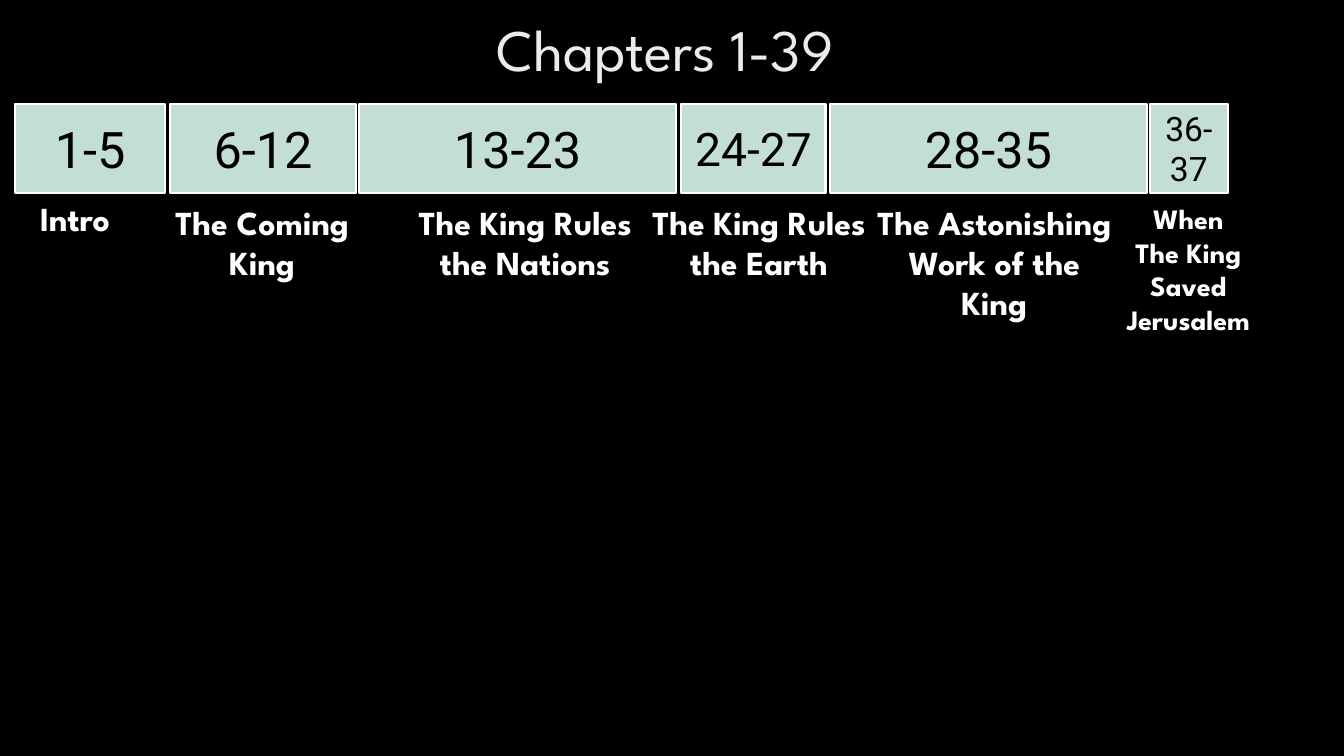
import pptx
import pptx.util
import pptx.dml.color
import pptx.enum.shapes
import pptx.enum.text

Pt = pptx.util.Pt
RGB = pptx.dml.color.RGBColor.from_string
LEFT = pptx.enum.text.PP_ALIGN.LEFT
CENTER = pptx.enum.text.PP_ALIGN.CENTER
TOP = pptx.enum.text.MSO_ANCHOR.TOP
MIDDLE = pptx.enum.text.MSO_ANCHOR.MIDDLE

theme = {
    "background": RGB("000000"),
    "title": RGB("EBEBEB"),
    "label": RGB("FFFFFF"),
    "block": RGB("C3DED3"),
    "block_line": RGB("FFFFFF"),
    "block_text": RGB("000000"),
    "heading_font": "League Spartan",
    "block_font": "Roboto",
    "title_size": 42,
    "label_size": 24,
    "small_label_size": 20,
    "block_size": 36,
    "tight_block_size": 33,
    "small_block_size": 24,
}


def write(sp, lines, font, size, color, bold=False, align=CENTER, anchor=TOP):
    tf = sp.text_frame
    tf.word_wrap = True
    tf.vertical_anchor = anchor
    tf.text = "\n".join(lines)
    for p in tf.paragraphs:
        p.alignment = align
        p.font.name = font
        p.font.size = Pt(size)
        p.font.bold = bold
        p.font.color.rgb = color


prs = pptx.Presentation()
prs.slide_width, prs.slide_height = Pt(960), Pt(540)
slide = prs.slides.add_slide(prs.slide_layouts[6])
slide.background.fill.solid()
slide.background.fill.fore_color.rgb = theme["background"]

# Title
sp = slide.shapes.add_textbox(Pt(104.4), Pt(2.9), Pt(740.9), Pt(110.2))
sp.text_frame.margin_top = Pt(6)
write(sp, ["Chapters 1-39"], theme["heading_font"], theme["title_size"], theme["title"])

# Chapter blocks: text, left, width, type size
blocks = [
    ("1-5", 10.8, 107.3, theme["block_size"]),
    ("6-12", 121.7, 132.5, theme["block_size"]),
    ("13-23", 256.3, 226.8, theme["block_size"]),
    ("24-27", 486.7, 103, theme["tight_block_size"]),
    ("28-35", 592.6, 226.8, theme["block_size"]),
    ("36-37", 821.5, 55.4, theme["small_block_size"]),
]
for text, left, width, size in blocks:
    sp = slide.shapes.add_shape(pptx.enum.shapes.MSO_SHAPE.RECTANGLE,
                                Pt(left), Pt(74.2), Pt(width), Pt(63.4))
    sp.shadow.inherit = False
    sp.fill.solid()
    sp.fill.fore_color.rgb = theme["block"]
    sp.line.color.rgb = theme["block_line"]
    sp.line.width = Pt(1.5)
    write(sp, [text], theme["block_font"], size, theme["block_text"], anchor=MIDDLE)

# Section labels: lines, left, top, width, height, type size, alignment
big, small = theme["label_size"], theme["small_label_size"]
labels = [
    (["Intro"], 21.6, 137.5, 128.2, 36, big, LEFT),
    (["The Coming King"], 103.7, 140.4, 167.1, 65.5, big, CENTER),
    (["The King Rules the Nations"], 291.6, 140.4, 167.1, 94.3, big, CENTER),
    (["The King Rules the Earth"], 458.6, 140.4, 167.1, 94.3, big, CENTER),
    (["The Astonishing Work of the King"], 617, 140.4, 186.5, 123.8, big, CENTER),
    (["When", "The King Saved Jerusalem"], 791.3, 140.4, 115.2, 104.4, small, CENTER),
]
for lines, left, top, width, height, size, align in labels:
    sp = slide.shapes.add_textbox(Pt(left), Pt(top), Pt(width), Pt(height))
    write(sp, lines, theme["heading_font"], size, theme["label"], bold=True, align=align)

prs.save("out.pptx")
